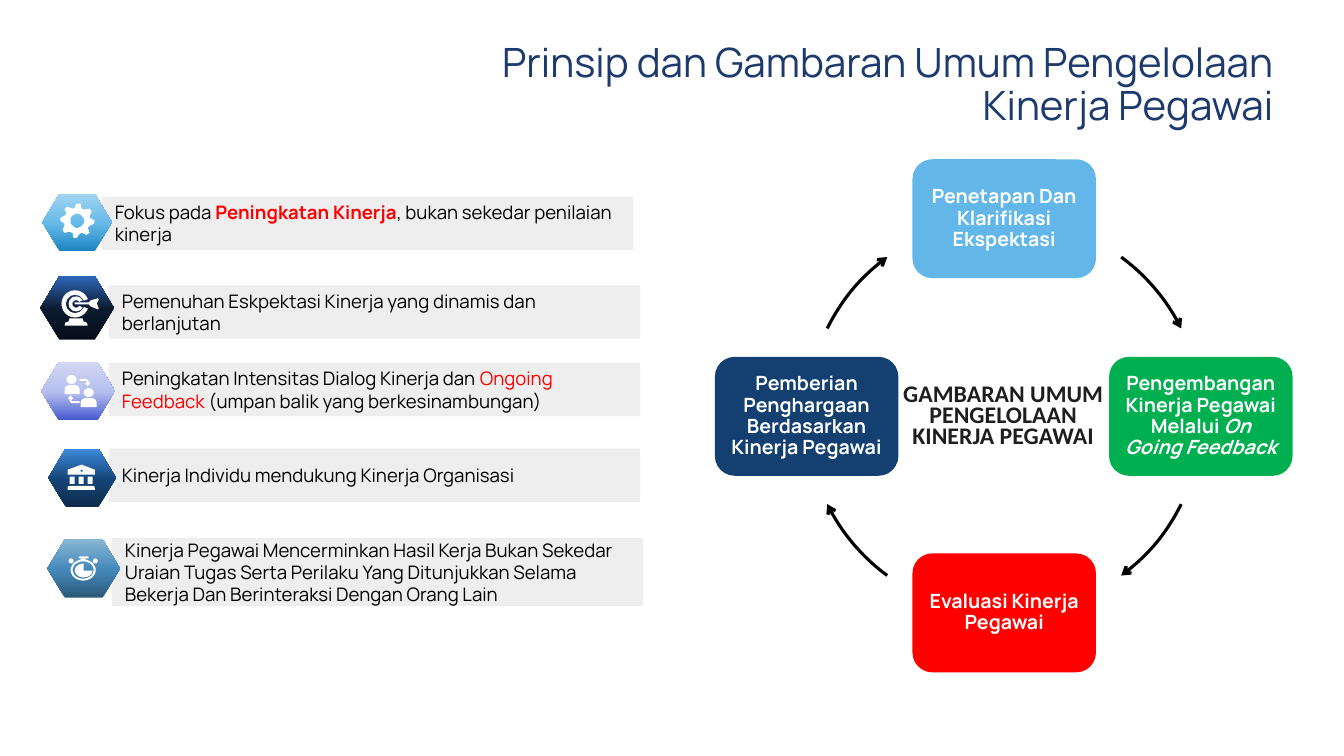
"""Build the slide on the principles and cycle of staff performance management."""
from copy import deepcopy
from math import cos, pi, sin
from pptx import Presentation, util as u
from pptx.dml.color import RGBColor
from pptx.enum import shapes, text
from pptx.oxml import parse_xml
from pptx.oxml.ns import nsdecls, qn

PX = 9144
KIND = shapes.MSO_SHAPE
COLORS = {
    "navy": "1D3A6E", "white": "FFFFFF", "black": "000000", "ink": "1E1E1E",
    "gray": "EEEEEE", "red": "FF0000", "sky": "62B7E8", "green": "00B050",
    "blue": "134070", "roof": "15467A",
}
TITLE = "Prinsip dan Gambaran Umum Pengelolaan Kinerja Pegawai"
CENTER = "GAMBARAN UMUM PENGELOLAAN KINERJA PEGAWAI"
CARDS = [
    (905, 158, "sky", [("Penetapan Dan Klarifikasi Ekspektasi", "")]),
    (1100, 354, "green", [("Pengembangan Kinerja Pegawai Melalui ", ""),
                          ("On Going Feedback", "i")]),
    (905, 549, "red", [("Evaluasi Kinerja Pegawai", "")]),
    (709, 354, "blue", [("Pemberian Penghargaan Berdasarkan Kinerja Pegawai", "")]),
]
ARCS = [(306.3, 333.6), (26.4, 53.7), (126.3, 153.6), (206.4, 233.7)]
BARS = [
    (101, 195, 53, [("Fokus pada ", ""), ("Peningkatan Kinerja", "rb"),
                    (", bukan sekedar penilaian kinerja", "")]),
    (108, 283, 53, [("Pemenuhan Eskpektasi Kinerja yang dinamis dan berlanjutan", "")]),
    (108, 360, 53, [("Peningkatan Intensitas Dialog Kinerja dan ", ""),
                    ("Ongoing Feedback ", "r"),
                    ("(umpan balik yang berkesinambungan)", "")]),
    (108, 445, 53, [("Kinerja Individu mendukung Kinerja Organisasi", "")]),
    (111, 534, 67, [("Kinerja Pegawai Mencerminkan Hasil Kerja Bukan Sekedar "
                     "Uraian Tugas Serta Perilaku Yang Ditunjukkan Selama "
                     "Bekerja Dan Berinteraksi Dengan Orang Lain", "")]),
]
BADGES = [
    ((42, 192, 69, 57), ("1C85C1", "67B9E9", "A1D4F1")),
    ((40, 274, 73, 63), ("060D18", "0C1A2F", "2E67B9")),
    ((41, 359, 73, 58), ("465AD0", "B6BEED", "D2D7F4")),
    ((48, 445, 67, 58), ("0D2B4B", "15467A", "3D8BDE")),
    ((47, 535, 72, 58), ("2C5979", "4389BB", "8AB6D5")),
]
ROUND = KIND.ROUND_2_SAME_RECTANGLE
PARTS = [
    (KIND.BLOCK_ARC, (61, 288, 27, 27), (12, 204, 0.16)),
    (KIND.BLOCK_ARC, (68, 294, 15, 15), (18, 198, 0.25)),
    (KIND.OVAL, (66, 372, 10, 9), ()),
    (KIND.OVAL, (83, 385, 10, 9), ()),
    (ROUND, (64, 382, 15, 9), (0.5, 0)),
    (ROUND, (80, 395, 16, 9), (0.5, 0)),
    (ROUND, (67, 482, 27, 4), (0.5, 0)),
    (KIND.RECTANGLE, (69, 473, 5, 7), ()),
    (KIND.RECTANGLE, (78, 473, 5, 7), ()),
    (KIND.RECTANGLE, (87, 473, 5, 7), ()),
    (KIND.DONUT, (70, 555, 25, 21), (0.09,)),
    (KIND.PIE, (74, 559, 18, 14), (0, 162)),
    (ROUND, (78, 552, 10, 2), (0.5, 0)),
    (KIND.RECTANGLE, (80, 554, 5, 2), ()),
    (KIND.OVAL, (68, 554, 5, 5), ()),
    (KIND.OVAL, (92, 554, 5, 5), ()),
]
POLYS = [
    [(74, 300), (88, 300), (90, 298), (97, 296), (98, 297), (96, 301),
     (98, 306), (97, 307), (90, 304), (88, 302), (74, 302)],
    [(69, 316), (82, 316), (83, 319), (86, 320), (87, 323), (64, 323),
     (65, 320), (68, 319)],
    [(79, 376), (86, 376), (88, 378), (88, 380), (90, 380), (87, 383),
     (84, 380), (86, 380), (86, 378), (79, 378)],
    [(79, 400), (71, 400), (69, 398), (69, 396), (67, 396), (70, 392),
     (73, 396), (71, 396), (71, 398), (79, 398)],
    [(81, 461), (94, 466), (94, 471), (67, 471), (67, 466)],
]


def rgb(name):
    return RGBColor.from_string(COLORS.get(name, name))


def ring(cx, cy, radii):
    step = 2 * pi / len(radii)
    return [(round(cx + r * cos(i * step), 2), round(cy + r * sin(i * step), 2))
            for i, r in enumerate(radii)]


def paint(shape, fill):
    shape.shadow.inherit = False
    shape.line.fill.background()
    shape.fill.solid()
    shape.fill.fore_color.rgb = rgb(fill)
    return shape


def add(slide, kind, box, fill, adjs=()):
    shape = slide.shapes.add_shape(kind, *(v * PX for v in box))
    for i, value in enumerate(adjs):
        shape.adjustments[i] = value
    return paint(shape, fill)


def trace(slide, *loops):
    pen = slide.shapes.build_freeform(*loops[0][0], scale=PX)
    for i, loop in enumerate(loops):
        if i:
            pen.move_to(*loop[0])
        pen.add_line_segments(loop[1:], close=True)
    paint(pen.convert_to_shape(), "white")


def write(shape, runs, size, color, inset, align, bold=False, font="Manrope",
          space=None, anchor=text.MSO_ANCHOR.MIDDLE):
    frame = shape.text_frame
    frame.word_wrap = True
    frame.vertical_anchor = anchor
    frame.margin_left = frame.margin_right = inset * PX
    frame.margin_top = frame.margin_bottom = inset * PX
    para = frame.paragraphs[0]
    para.alignment = align
    para.line_spacing = space
    para.font.name, para.font.size, para.font.bold = font, u.Pt(size), bold
    para.font.color.rgb = rgb(color)
    for words, style in runs:
        run = para.add_run()
        run.text = words
        if "r" in style:
            run.font.color.rgb = rgb("red")
        if "b" in style:
            run.font.bold = True
        if "i" in style:
            run.font.italic = True


def cycle(slide):
    mid = text.PP_ALIGN.CENTER
    for x, y, fill, runs in CARDS:
        card = add(slide, KIND.ROUNDED_RECTANGLE, (x, y, 182, 118), fill)
        write(card, runs, 14, "white", 6, mid, True, space=0.9)
    for ends in ARCS:
        arc = add(slide, KIND.ARC, (800, 217, 392, 392), "white",
                  [a * 0.6 for a in ends])
        arc.fill.background()
        arc.line.color.rgb = rgb("black")
        arc.line.width = u.Pt(2.25)
        arc.element.spPr.find(qn("a:ln")).append(
            parse_xml(f'<a:tailEnd {nsdecls("a")} type="arrow"/>'))
    label = slide.shapes.add_textbox(*(v * PX for v in (893, 383, 204, 105)))
    write(label, [(CENTER, "")], 17, "ink", 0, mid, True, "Calibri",
          u.Pt(15), text.MSO_ANCHOR.TOP)


def badge(slide, box, tones):
    hexa = add(slide, KIND.HEXAGON, box, "white", (0.3,))
    hexa.fill.gradient()
    hexa.fill.gradient_angle = 90
    stops = hexa.element.spPr.find(qn("a:gradFill")).find(qn("a:gsLst"))
    stops.insert(1, deepcopy(stops[0]))
    for stop, tone, place in zip(hexa.fill.gradient_stops, tones, (0, 0.48, 1)):
        stop.color.rgb = rgb(tone)
        stop.position = place


def main():
    deck = Presentation()
    deck.slide_width, deck.slide_height = 1333 * PX, 750 * PX
    slide = deck.slides.add_slide(deck.slide_layouts[5])
    title = slide.shapes.title
    title.left, title.top, title.width, title.height = (
        v * PX for v in (448, 37, 825, 58))
    write(title, [(TITLE, "")], 28.8, "navy", 10, text.PP_ALIGN.RIGHT,
          space=0.9, anchor=text.MSO_ANCHOR.TOP)
    title.text_frame.margin_top = title.text_frame.margin_bottom = 5 * PX
    title.text_frame.auto_size = text.MSO_AUTO_SIZE.NONE
    cycle(slide)
    for x, y, high, runs in BARS:
        bar = add(slide, KIND.RECTANGLE, (x, y, 527, high), "gray")
        write(bar, runs, 13.3, "black", 13, text.PP_ALIGN.LEFT)
    for box, tones in BADGES:
        badge(slide, box, tones)
    trace(slide, ring(76.5, 219, [17, 17, 13, 13] * 8), ring(76.5, 219, [7] * 24))
    for kind, box, adjs in PARTS:
        add(slide, kind, box, "white", adjs)
    for loop in POLYS:
        trace(slide, loop)
    add(slide, KIND.OVAL, (80, 466, 2, 2), "roof")
    deck.save("out.pptx")


if __name__ == "__main__":
    main()
